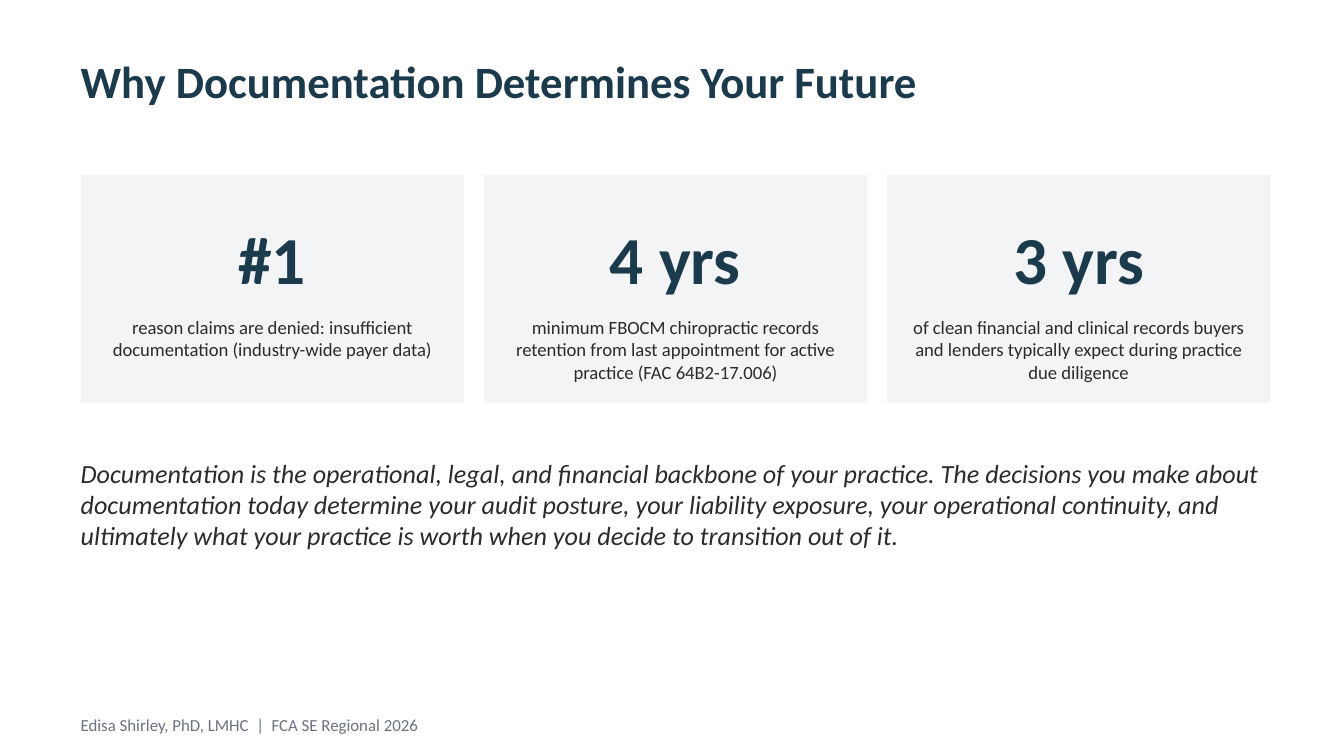
from pptx import Presentation
from pptx.dml.color import RGBColor
from pptx.enum.shapes import MSO_SHAPE
from pptx.enum.text import MSO_ANCHOR as ANCHOR, PP_ALIGN as ALIGN
from pptx.util import Inches, Pt

NAVY, INK, GRAY, PANEL = "1B3A4B", "2B2B2B", "6B7280", "F3F4F6"
LEFT, CARD_W, CARD_GAP = 0.6, 2.85, 0.15


def rgb(value):
    return RGBColor.from_string(value)


def write(sp, text, size, color, bold=False, italic=False,
          align=ALIGN.LEFT, anchor=ANCHOR.TOP):
    tf = sp.text_frame
    tf.word_wrap = True
    tf.vertical_anchor = anchor
    tf.margin_left = tf.margin_right = tf.margin_top = tf.margin_bottom = 0
    p = tf.paragraphs[0]
    p.text = text
    p.alignment = align
    p.font.name = "Calibri"
    p.font.size = Pt(size)
    p.font.bold = bold
    p.font.italic = italic
    p.font.color.rgb = rgb(color)


prs = Presentation()
prs.slide_width, prs.slide_height = Inches(10), Inches(10 * 9 / 16)
s = prs.slides.add_slide(prs.slide_layouts[5])
s.background.fill.solid()
s.background.fill.fore_color.rgb = rgb("FFFFFF")

title = s.shapes.title
title.left, title.top = Inches(LEFT), Inches(0.4)
title.width, title.height = Inches(8.8), Inches(0.55)
write(title, "Why Documentation Determines Your Future", 24, NAVY, bold=True)

footer = s.shapes.add_textbox(Inches(LEFT), Inches(5.32), Inches(8.8), Inches(0.25))
write(footer, "Edisa Shirley, PhD, LMHC  |  FCA SE Regional 2026", 9, GRAY)

stats = [
    ("#1", "reason claims are denied: insufficient documentation "
           "(industry-wide payer data)"),
    ("4 yrs", "minimum FBOCM chiropractic records retention from last "
              "appointment for active practice (FAC 64B2-17.006)"),
    ("3 yrs", "of clean financial and clinical records buyers and lenders "
              "typically expect during practice due diligence"),
]
for i, (figure, caption) in enumerate(stats):
    x = LEFT + i * (CARD_W + CARD_GAP)
    card = s.shapes.add_shape(MSO_SHAPE.RECTANGLE, Inches(x), Inches(1.3),
                              Inches(CARD_W), Inches(1.7))
    card.shadow.inherit = False
    card.fill.solid()
    card.fill.fore_color.rgb = rgb(PANEL)
    card.line.fill.background()

    sp = s.shapes.add_textbox(Inches(x), Inches(1.45), Inches(CARD_W), Inches(0.94))
    write(sp, figure, 36, NAVY, bold=True, align=ALIGN.CENTER, anchor=ANCHOR.MIDDLE)

    sp = s.shapes.add_textbox(Inches(x + 0.15), Inches(2.35),
                              Inches(CARD_W - 0.3), Inches(0.51))
    write(sp, caption, 10, INK, align=ALIGN.CENTER)

summary = s.shapes.add_textbox(Inches(LEFT), Inches(3.4), Inches(8.85), Inches(1.6))
write(summary,
      "Documentation is the operational, legal, and financial backbone of your "
      "practice. The decisions you make about documentation today determine your "
      "audit posture, your liability exposure, your operational continuity, and "
      "ultimately what your practice is worth when you decide to transition out of it.",
      14, INK, italic=True)

prs.save("out.pptx")
